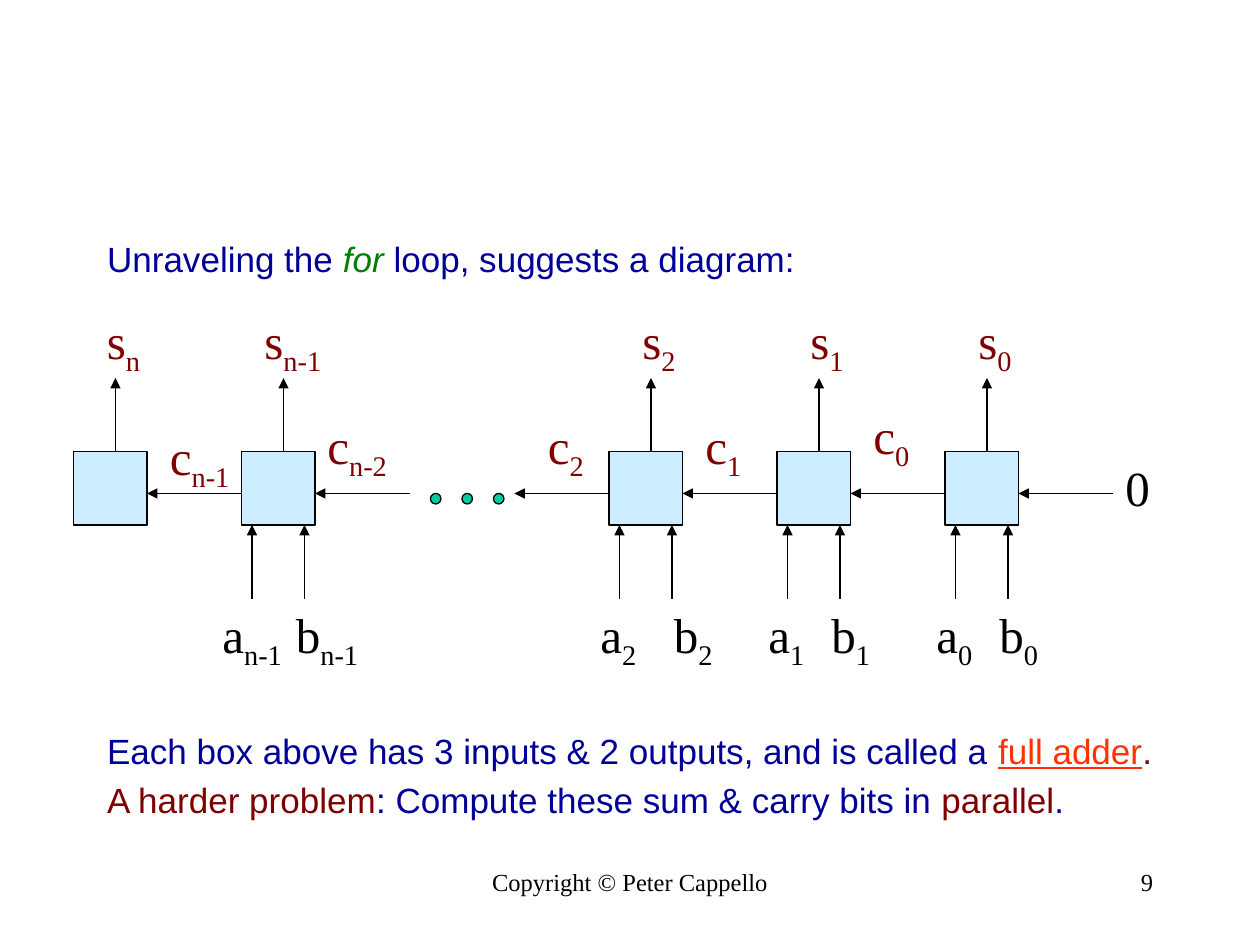
from pptx import Presentation
from pptx.dml.color import RGBColor
from pptx.enum.shapes import MSO_CONNECTOR, MSO_SHAPE
from pptx.enum.text import MSO_AUTO_SIZE, PP_ALIGN
from pptx.util import Inches, Pt
from lxml import etree

RECT, OVAL, LINE = MSO_SHAPE.RECTANGLE, MSO_SHAPE.OVAL, MSO_CONNECTOR.STRAIGHT
LEFT, MID, RIGHT = PP_ALIGN.LEFT, PP_ALIGN.CENTER, PP_ALIGN.RIGHT
FIXED = MSO_AUTO_SIZE.NONE
BLACK = RGBColor(0x00, 0x00, 0x00)
NAVY = RGBColor(0x00, 0x00, 0x99)
MAROON = RGBColor(0x7F, 0x00, 0x00)
GREEN = RGBColor(0x00, 0x7F, 0x00)
RED = RGBColor(0xFF, 0x33, 0x00)
SKY = RGBColor(0xCC, 0xEC, 0xFF)
TEAL = RGBColor(0x00, 0xCC, 0x99)
SERIF, SANS = "Times New Roman", "Arial"
NS = "http://schemas.openxmlformats.org/drawingml/2006/main"
CELL = Inches(1) // 12
SIDE, REACH = 7, 9
ROW = 43
CARRY = ROW + 4


def grid(*cells):
    """Turn grid columns and rows into lengths."""
    return [round(cell * CELL) for cell in cells]


def add_tag(parent, name, **attrs):
    """Append a drawing element and return it."""
    return etree.SubElement(parent, f"{{{NS}}}{name}", attrs)


def write(para, text, size=28, font=SERIF, color=BLACK, italic=False,
          under=False, sub=False):
    """Add one formatted run to a paragraph."""
    run = para.add_run()
    run.text = text
    face = run.font
    face.size, face.name, face.color.rgb = Pt(size), font, color
    face.italic, face.underline = italic, under
    if sub:
        run._r.get_or_add_rPr().set("baseline", "-25000")


def add_label(slide, box, text, index="", align=LEFT, **style):
    """Place a text box with an optional subscript."""
    frame = slide.shapes.add_textbox(*grid(*box)).text_frame
    frame.word_wrap = True
    para = frame.paragraphs[0]
    para.alignment = align
    write(para, text, **style)
    if index:
        write(para, index, sub=True, **style)


def add_block(slide, kind, box, fill):
    """Place a filled shape with a thin black outline."""
    shape = slide.shapes.add_shape(kind, *grid(*box))
    shape.shadow.inherit = False
    shape.fill.solid()
    shape.fill.fore_color.rgb = fill
    shape.line.color.rgb, shape.line.width = BLACK, Pt(0.75)


def add_arrow(slide, *ends):
    """Draw a thin arrow between two grid points."""
    arrow = slide.shapes.add_connector(LINE, *grid(*ends))
    arrow.line.color.rgb, arrow.line.width = BLACK, Pt(0.75)
    add_tag(arrow.line._get_or_add_ln(), "tailEnd", type="triangle")
    add_tag(arrow._element.spPr, "effectLst")


def add_stage(slide, left, index, spots):
    """Draw one box with its sum and, if it has them, its two inputs."""
    add_block(slide, RECT, (left, ROW, SIDE, SIDE), SKY)
    add_arrow(slide, left + 4, ROW, left + 4, ROW - SIDE)
    add_label(slide, (left + spots[0], 29, 10, 6.8), "s", index, color=MAROON)
    base = ROW + SIDE
    for name, spot, port in zip("ab", spots[1:], (1, 6)):
        add_arrow(slide, left + port, base + SIDE, left + port, base)
        add_label(slide, (left + spot, 57, 9, 6.8), name, index)


def add_adder(slide):
    """Draw the chain of adders with its carries."""
    stages = [(7, "n", (2,)), (23, "n-1", (1, -3, 4)), (58, "2", (2, -2, 5)),
              (74, "1", (2, -2, 4)), (90, "0", (2, -2, 4))]
    for left, index, spots in stages:
        add_stage(slide, left, index, spots)
    for start in [left for left, *_ in stages[1:]] + [39, 106]:
        add_arrow(slide, start, CARRY, start - REACH, CARRY)
    for left, top, index in ((15, 40, "n-1"), (30, 39, "n-2"), (51, 39, "2"),
                             (66, 39, "1"), (82, 38, "0")):
        add_label(slide, (left, top, 10, 6.8), "c", index, color=MAROON)
    add_label(slide, (106, ROW, 7, 6.8), "0")
    for step in range(3):
        add_block(slide, OVAL, (41 + 3 * step, CARRY, 1, 1), TEAL)


def add_body(slide, box):
    """Fill the body placeholder with text above and below the diagram."""
    body = slide.placeholders[1]
    body.left, body.top, body.width, body.height = grid(*box)
    frame = body.text_frame
    frame.auto_size = FIXED
    lines = [
        (0, [("Unraveling the ", NAVY, {}), ("for", GREEN, {"italic": True}),
             (" loop, suggests a diagram:", NAVY, {})]),
        (257, [("Each box above has 3 inputs & 2 outputs, and is called a ", NAVY, {}),
               ("full adder", RED, {"under": True}), (".", MAROON, {})]),
        (4, [("A harder problem", MAROON, {}),
             (": Compute these sum & carry bits in ", NAVY, {}),
             ("parallel", MAROON, {}), (".", NAVY, {})]),
    ]
    for pos, (gap, runs) in enumerate(lines):
        para = frame.add_paragraph() if pos else frame.paragraphs[0]
        para.space_before = Pt(gap)
        props = para._p.get_or_add_pPr()
        props.set("marL", str(Inches(0.38)))
        props.set("indent", str(-Inches(0.38)))
        add_tag(props, "buNone")
        for text, color, style in runs:
            write(para, text, size=20, font=SANS, color=color, **style)


def add_footer(slide, top):
    """Place the credit line and the page number."""
    add_label(slide, (41, top, 38, 6), "Copyright © Peter Cappello",
              align=MID, size=14)
    add_label(slide, (86, top, 25, 6), "9", align=RIGHT, size=14)


def main():
    """Build the slide and save it."""
    deck = Presentation()
    deck.slide_width, deck.slide_height = Inches(10), Inches(7.5)
    slide = deck.slides.add_slide(deck.slide_layouts[1])
    title = slide.shapes.title._element
    title.getparent().remove(title)
    add_footer(slide, 82)
    add_body(slide, (9, 22, 102, 58))
    add_adder(slide)
    deck.save("out.pptx")


if __name__ == "__main__":
    main()
